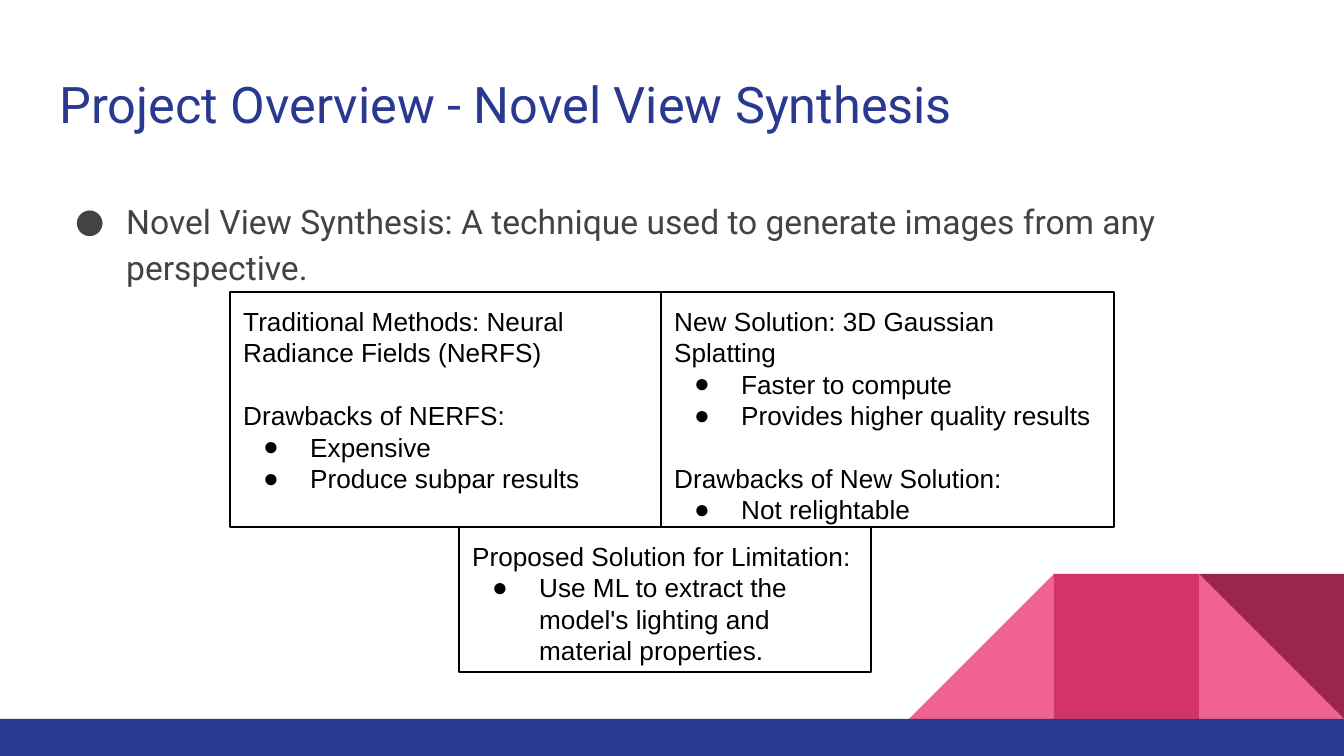
import pptx
import pptx.util
import pptx.dml.color
import pptx.enum.shapes
import pptx.enum.text
import pptx.oxml.ns
import lxml.etree

Pt = pptx.util.Pt
RGB = pptx.dml.color.RGBColor
SHAPE = pptx.enum.shapes.MSO_SHAPE
qn = pptx.oxml.ns.qn

PX = 914400 / 134.4
BLUE = RGB(0x2A, 0x39, 0x90)
PINK = RGB(0xF0, 0x62, 0x92)
ROSE = RGB(0xD2, 0x33, 0x69)
WINE = RGB(0x9C, 0x25, 0x4D)
GREY = RGB(0x43, 0x43, 0x43)
BLACK = RGB(0, 0, 0)


def px(*nums):
    return [pptx.util.Emu(round(n * PX)) for n in nums]


def write(frame, lines, font, size, color, hang):
    """Fill a text frame; each line is (text, has bullet, points before)."""
    frame.word_wrap = True
    frame.auto_size = pptx.enum.text.MSO_AUTO_SIZE.NONE
    frame.vertical_anchor = pptx.enum.text.MSO_ANCHOR.TOP
    frame.margin_left = frame.margin_right = Pt(7.2)
    frame.margin_top = frame.margin_bottom = Pt(7.2)
    for i, (text, dot, gap) in enumerate(lines):
        para = frame.add_paragraph() if i else frame.paragraphs[0]
        para.alignment = pptx.enum.text.PP_ALIGN.LEFT
        para.space_before = Pt(gap)
        run = para.add_run()
        run.text = text
        run.font.name = font
        run.font.size = Pt(size)
        run.font.color.rgb = color
        if dot:
            props = para._p.get_or_add_pPr()
            props.set("marL", str(px(67)[0]))
            props.set("indent", str(px(-hang)[0]))
            tint = lxml.etree.SubElement(props, qn("a:buClr"))
            lxml.etree.SubElement(tint, qn("a:srgbClr"), val=str(color))
            lxml.etree.SubElement(props, qn("a:buFont"), typeface=font)
            lxml.etree.SubElement(props, qn("a:buChar"), char="●")


deck = pptx.Presentation()
deck.slide_width, deck.slide_height = px(1344, 756)
slide = deck.slides.add_slide(deck.slide_layouts[5])
shapes = slide.shapes

# Corner decoration: square tiles standing on the footer bar
TILE, FOOT = 145, 719
tiles = [
    (SHAPE.RIGHT_TRIANGLE, 1, PINK, 0, False),
    (SHAPE.RIGHT_TRIANGLE, 3, PINK, 0, True),
    (SHAPE.RECTANGLE, 2, ROSE, 0, False),
    (SHAPE.RIGHT_TRIANGLE, 1, WINE, 180, False),
]
decor = []
for kind, col, color, turn, flip in tiles:
    tile = shapes.add_shape(kind, *px(1344 - col * TILE, FOOT - TILE, TILE, TILE))
    tile.rotation = turn
    if flip:
        tile._element.spPr.find(qn("a:xfrm")).set("flipH", "1")
    decor.append((tile, color))
decor.append((shapes.add_shape(SHAPE.RECTANGLE, *px(0, FOOT, 1344, 37)), BLUE))
for part, color in decor:
    part.shadow.inherit = False
    part.fill.solid()
    part.fill.fore_color.rgb = color
    part.line.fill.background()

title = shapes.title
title.left, title.top, title.width, title.height = px(46, 60, 1252, 89)
write(title.text_frame, [("Project Overview - Novel View Synthesis", False, 0)],
      "Roboto", 27, BLUE, 0)

body = shapes.add_textbox(*px(46, 181, 1252, 491))
write(body.text_frame,
      [("Novel View Synthesis: A technique used to generate images "
        "from any perspective.", True, 0)],
      "Roboto", 18, GREY, 51)
body.text_frame.paragraphs[0].line_spacing = 1.15

GAP = 16.8
boxes = [
    ((230, 292, 431, 235), [
        ("Traditional Methods: Neural Radiance Fields (NeRFS)", False, 0),
        ("Drawbacks of NERFS:", False, GAP),
        ("Expensive", True, 0),
        ("Produce subpar results", True, 0),
    ]),
    ((661, 292, 453, 235), [
        ("New Solution: 3D Gaussian Splatting", False, 0),
        ("Faster to compute", True, 0),
        ("Provides higher quality results", True, 0),
        ("Drawbacks of New Solution:", False, GAP),
        ("Not relightable", True, 0),
    ]),
    ((459, 527, 412, 145), [
        ("Proposed Solution for Limitation:", False, 0),
        ("Use ML to extract the model's lighting and material properties.", True, 0),
    ]),
]
for area, lines in boxes:
    box = shapes.add_shape(SHAPE.RECTANGLE, *px(*area))
    box.shadow.inherit = False
    box.fill.background()
    box.line.color.rgb = BLACK
    box.line.width = Pt(0.75)
    write(box.text_frame, lines, "Arial", 14, BLACK, 47)

deck.save("out.pptx")
